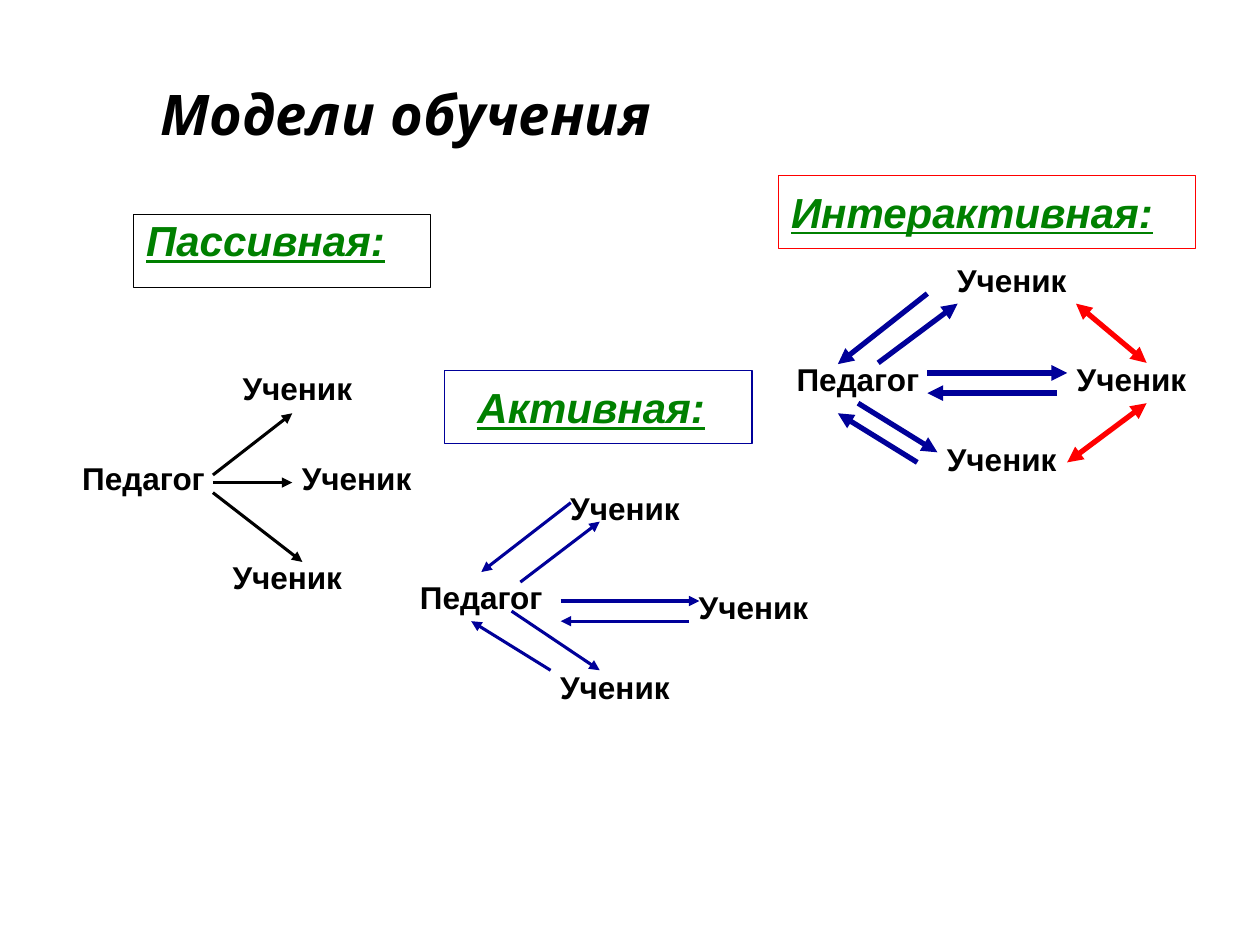
from dataclasses import dataclass

import pptx
import pptx.dml.color
import pptx.enum.shapes
import pptx.enum.text
import pptx.oxml.ns
import pptx.util
from lxml import etree
from pptx.util import Inches


@dataclass(frozen=True)
class Theme:
    black: str = "000000"
    green: str = "008000"
    blue: str = "000099"
    red: str = "FF0000"
    title_font: str = "Quicksand"
    text_font: str = "Arial"
    title_size: int = 32
    heading_size: int = 24
    label_size: int = 18
    frame_width: float = 0.75
    thin_arrow: float = 1.75
    thick_arrow: float = 3


THEME = Theme()
LABEL_HEIGHT = 0.4
TEACHER_WIDTH = 1.26
STUDENT_WIDTH = 1.18


def place(shape, left, top, width, height):
    shape.left, shape.top = Inches(left), Inches(top)
    shape.width, shape.height = Inches(width), Inches(height)


def rgb(color):
    return pptx.dml.color.RGBColor.from_string(color)


def set_line(line, color, width):
    line.color.rgb = rgb(color)
    line.width = pptx.util.Pt(width)


def write(shape, text, size, color, font_name=THEME.text_font, italic=False, underline=None):
    """Fill the shape with one bold paragraph and return that paragraph."""
    frame = shape.text_frame
    frame.text = text
    frame.auto_size = pptx.enum.text.MSO_AUTO_SIZE.NONE
    paragraph = frame.paragraphs[0]
    paragraph.alignment = pptx.enum.text.PP_ALIGN.LEFT
    font = paragraph.font
    font.name, font.size = font_name, pptx.util.Pt(size)
    font.bold, font.italic, font.underline = True, italic, underline
    font.color.rgb = rgb(color)
    return paragraph


def write_heading(shape, text, frame_color):
    set_line(shape.line, frame_color, THEME.frame_width)
    return write(shape, text, THEME.heading_size, THEME.green, italic=True, underline=True)


def add_title(slide, box):
    title = slide.shapes.title
    place(title, *box)
    title.text_frame.vertical_anchor = pptx.enum.text.MSO_ANCHOR.MIDDLE
    write(title, "Модели обучения", THEME.title_size, THEME.black, THEME.title_font, italic=True)


def add_passive_heading(slide, box):
    body = slide.placeholders[1]
    place(body, *box)
    paragraph = write_heading(body, "Пассивная:", THEME.black)
    paragraph.line_spacing = 0.9
    properties = paragraph._p.get_or_add_pPr()
    properties.set("marL", "0")
    properties.set("indent", "0")
    etree.SubElement(properties, pptx.oxml.ns.qn("a:buNone"))


def add_framed_heading(slide, box, text, color, indent):
    shape = slide.shapes.add_shape(
        pptx.enum.shapes.MSO_SHAPE.RECTANGLE, *[Inches(value) for value in box])
    shape.shadow.inherit = False
    shape.fill.background()
    write_heading(shape, text, color)
    frame = shape.text_frame
    frame.word_wrap = False
    frame.margin_left = Inches(indent)
    frame.vertical_anchor = pptx.enum.text.MSO_ANCHOR.MIDDLE


def add_label(slide, left, top, width, text):
    label = slide.shapes.add_textbox(
        Inches(left), Inches(top), Inches(width), Inches(LABEL_HEIGHT))
    label.text_frame.word_wrap = True
    paragraph = write(label, text, THEME.label_size, THEME.black)
    paragraph.alignment = pptx.enum.text.PP_ALIGN.CENTER


def add_people(slide, origin, teacher, students):
    x, y = origin
    add_label(slide, x + teacher[0], y + teacher[1], TEACHER_WIDTH, "Педагог")
    for left, top in students:
        add_label(slide, x + left, y + top, STUDENT_WIDTH, "Ученик")


def add_arrows(slide, origin, arrows, color, width, ends=("tailEnd",)):
    """Draw (x1, y1, x2, y2) arrows measured from the origin."""
    x, y = origin
    for x1, y1, x2, y2 in arrows:
        arrow = slide.shapes.add_connector(
            pptx.enum.shapes.MSO_CONNECTOR.STRAIGHT,
            Inches(x + x1), Inches(y + y1), Inches(x + x2), Inches(y + y2))
        set_line(arrow.line, color, width)
        for end in ends:
            etree.SubElement(arrow.line._get_or_add_ln(),
                             pptx.oxml.ns.qn("a:" + end), type="triangle")
        etree.SubElement(arrow._element.spPr, pptx.oxml.ns.qn("a:effectLst"))


def add_passive_model(slide, origin):
    add_people(slide, origin, (0, 0.71), [(1.26, 0), (1.73, 0.71), (1.18, 1.5)])
    add_arrows(slide, origin, [
        (1.18, 0.89, 1.81, 0.4),
        (1.18, 0.95, 1.81, 0.95),
        (1.18, 1.03, 1.89, 1.58),
    ], THEME.black, THEME.thin_arrow)


def add_active_model(slide, origin):
    add_people(slide, origin, (0, 0.71), [(1.18, 0), (2.2, 0.79), (1.1, 1.42)])
    add_arrows(slide, origin, [
        (0.94, 0.79, 1.57, 0.31), (1.34, 0.16, 0.63, 0.71),
        (1.26, 0.94, 2.36, 0.94), (2.28, 1.1, 1.26, 1.1),
        (0.87, 1.02, 1.57, 1.49), (1.18, 1.49, 0.55, 1.1),
    ], THEME.blue, THEME.thin_arrow)


def add_interactive_model(slide, origin):
    add_people(slide, origin, (0, 0.79), [(1.26, 0), (2.21, 0.79), (1.18, 1.42)])
    add_arrows(slide, origin, [
        (0.79, 0.86, 1.42, 0.39), (1.18, 0.31, 0.47, 0.87),
        (1.18, 0.94, 2.29, 0.94), (2.21, 1.1, 1.18, 1.1),
        (0.63, 1.18, 1.26, 1.57), (1.1, 1.65, 0.47, 1.26),
    ], THEME.blue, THEME.thick_arrow)
    add_arrows(slide, origin, [
        (2.36, 0.39, 2.92, 0.86), (2.92, 1.18, 2.29, 1.65),
    ], THEME.red, THEME.thick_arrow, ends=("headEnd", "tailEnd"))


def main():
    presentation = pptx.Presentation()
    presentation.slide_width, presentation.slide_height = Inches(10), Inches(7.5)
    slide = presentation.slides.add_slide(presentation.slide_layouts[1])
    add_title(slide, (1.17, 0.62, 8.58, 0.56))
    add_passive_heading(slide, (1.06, 1.7, 2.36, 0.58))
    add_framed_heading(slide, (3.53, 2.94, 2.44, 0.58), "Активная:", THEME.blue, 0.26)
    add_framed_heading(slide, (6.18, 1.39, 3.31, 0.58), "Интерактивная:", THEME.red, 0.1)
    add_passive_model(slide, (0.51, 2.88))
    add_active_model(slide, (3.19, 3.83))
    add_interactive_model(slide, (6.18, 2.02))
    presentation.save("out.pptx")


if __name__ == "__main__":
    main()
